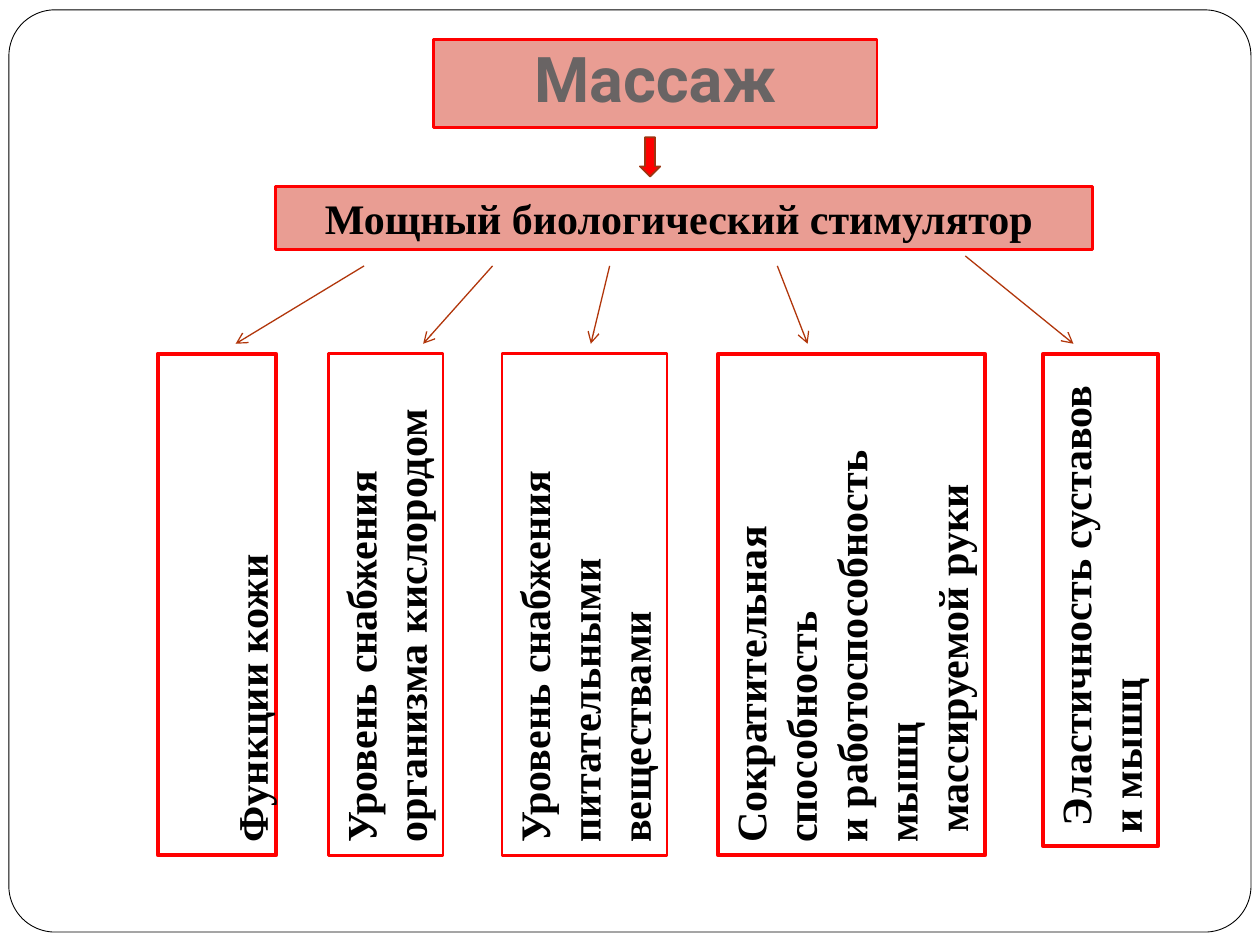
from lxml.etree import SubElement
from pptx import Presentation
from pptx.dml.color import RGBColor
from pptx.enum.shapes import MSO_CONNECTOR, MSO_SHAPE
from pptx.enum.text import MSO_ANCHOR, MSO_AUTO_SIZE, PP_ALIGN
from pptx.oxml.ns import qn
from pptx.util import Cm, Pt

BLACK = RGBColor(0x00, 0x00, 0x00)
GREY = RGBColor(0x69, 0x64, 0x64)
RED = RGBColor(0xFF, 0x00, 0x00)
PINK = RGBColor(0xE9, 0x9D, 0x93)
RUST = RGBColor(0xB1, 0x36, 0x0B)
DARK_RUST = RGBColor(0x9C, 0x35, 0x11)
SERIF = "Times New Roman"
BOX_TOP = 7.13
BOX_LENGTH = 10.11


def place(sp, left, top, width, height):
    """Set position and size in centimetres."""
    sp.left, sp.top, sp.width, sp.height = Cm(left), Cm(top), Cm(width), Cm(height)


def place_upright(sp, left, width, top=BOX_TOP, length=BOX_LENGTH):
    """Turn a box a quarter left so that it covers the given upright area."""
    shift = (length - width) / 2
    place(sp, left - shift, top + shift, length, width)
    sp.rotation = 270


def style(sp, line, weight, fill=None):
    """Set the outline and the fill."""
    sp.line.color.rgb = line
    sp.line.width = Pt(weight)
    if fill is None:
        sp.fill.background()
    else:
        sp.fill.solid()
        sp.fill.fore_color.rgb = fill


def add_run(p, text, size=24, font=SERIF, color=BLACK, bold=True):
    """Add one formatted run."""
    r = p.add_run()
    r.text = text
    r.font.size = Pt(size)
    r.font.name = font
    r.font.bold = bold
    r.font.color.rgb = color


def set_frame(sp, anchor):
    """Make the text wrap at a fixed size."""
    tf = sp.text_frame
    tf.word_wrap = True
    tf.auto_size = MSO_AUTO_SIZE.NONE
    tf.vertical_anchor = anchor
    return tf


def add_shape(s, kind, left, top, width, height, line, weight, fill=None):
    """Add a preset shape without a shadow."""
    sp = s.shapes.add_shape(kind, Cm(left), Cm(top), Cm(width), Cm(height))
    sp.shadow.inherit = False
    style(sp, line, weight, fill)
    return sp


def add_effect_box(s, left, width, weight, lines):
    """Add an upright box with one paragraph for each line."""
    sp = s.shapes.add_textbox(0, 0, 0, 0)
    place_upright(sp, left, width)
    style(sp, RED, weight)
    tf = set_frame(sp, MSO_ANCHOR.TOP)
    for i, line in enumerate(lines):
        p = tf.paragraphs[0] if i == 0 else tf.add_paragraph()
        add_run(p, line)
    return sp


def add_arrow(s, x1, y1, x2, y2):
    """Add a thin line with an open arrowhead at its end."""
    cn = s.shapes.add_connector(MSO_CONNECTOR.STRAIGHT, Cm(x1), Cm(y1), Cm(x2), Cm(y2))
    cn.line.color.rgb = RUST
    cn.line.width = Pt(0.75)
    SubElement(cn.line._get_or_add_ln(), qn("a:tailEnd"), type="arrow")
    SubElement(cn._element.spPr, qn("a:effectLst"))


def fill_title(sp):
    """Format the title placeholder."""
    place(sp, 8.74, 0.79, 8.94, 1.78)
    style(sp, RED, 1.5, PINK)
    tf = set_frame(sp, MSO_ANCHOR.BOTTOM)
    tf.margin_bottom = Cm(0.25)
    p = tf.paragraphs[0]
    p.alignment = PP_ALIGN.CENTER
    add_run(p, "Массаж", 36, "Roboto", GREY)


def fill_body(sp):
    """Format the body placeholder as the first upright box."""
    place_upright(sp, 3.18, 2.39)
    style(sp, RED, 2.25)
    tf = set_frame(sp, MSO_ANCHOR.BOTTOM)
    tf.margin_bottom = 0
    p = tf.paragraphs[0]
    pPr = p._p.get_or_add_pPr()
    pPr.set("marL", "0")
    pPr.set("indent", "0")
    SubElement(pPr, qn("a:buNone"))
    add_run(p, "Функции кожи", 24.1)


def add_stimulator(s):
    """Add the wide box below the title."""
    sp = s.shapes.add_textbox(Cm(5.56), Cm(3.76), Cm(16.46), Cm(1.27))
    style(sp, RED, 1.5, PINK)
    p = set_frame(sp, MSO_ANCHOR.TOP).paragraphs[0]
    p.alignment = PP_ALIGN.CENTER
    add_run(p, "Мощный биологический стимулятор ")


def add_joints_box(s):
    """Add the last upright box, which opens with a small space."""
    sp = add_effect_box(s, 21.03, 2.31, 2.25, [])
    place_upright(sp, 21.03, 2.31, length=9.93)
    p = sp.text_frame.paragraphs[0]
    add_run(p, " ", size=18, bold=False)
    add_run(p, "Эластичность суставов и мышц")


def main():
    """Build the slide."""
    prs = Presentation()
    prs.slide_width, prs.slide_height = Cm(25.4), Cm(19.05)
    s = prs.slides.add_slide(prs.slide_layouts[1])
    frame = add_shape(s, MSO_SHAPE.ROUNDED_RECTANGLE, 0.18, 0.2, 25.04, 18.59, BLACK, 0.5)
    frame.adjustments[0] = 0.05
    fill_title(s.shapes.title)
    fill_body(s.placeholders[1])
    add_stimulator(s)
    for left, width, weight, lines in (
        (6.62, 2.31, 1.5, ["Уровень снабжения", "организма кислородом"]),
        (10.12, 3.33, 1.5, ["Уровень снабжения", "питательными веществами"]),
        (14.48, 5.38, 2.25, ["Сократительная способность",
                             "и работоспособность мышц", " массируемой руки"]),
    ):
        add_effect_box(s, left, width, weight, lines)
    add_joints_box(s)
    add_shape(s, MSO_SHAPE.DOWN_ARROW, 12.9, 2.77, 0.41, 0.79, DARK_RUST, 1, RED)
    for x1, y1, x2 in ((7.34, 5.36, 4.75), (9.93, 5.36, 8.53), (12.29, 5.36, 11.91),
                       (15.67, 5.36, 16.28), (19.46, 5.16, 21.64)):
        add_arrow(s, x1, y1, x2, 6.93)
    prs.save("out.pptx")


if __name__ == "__main__":
    main()
